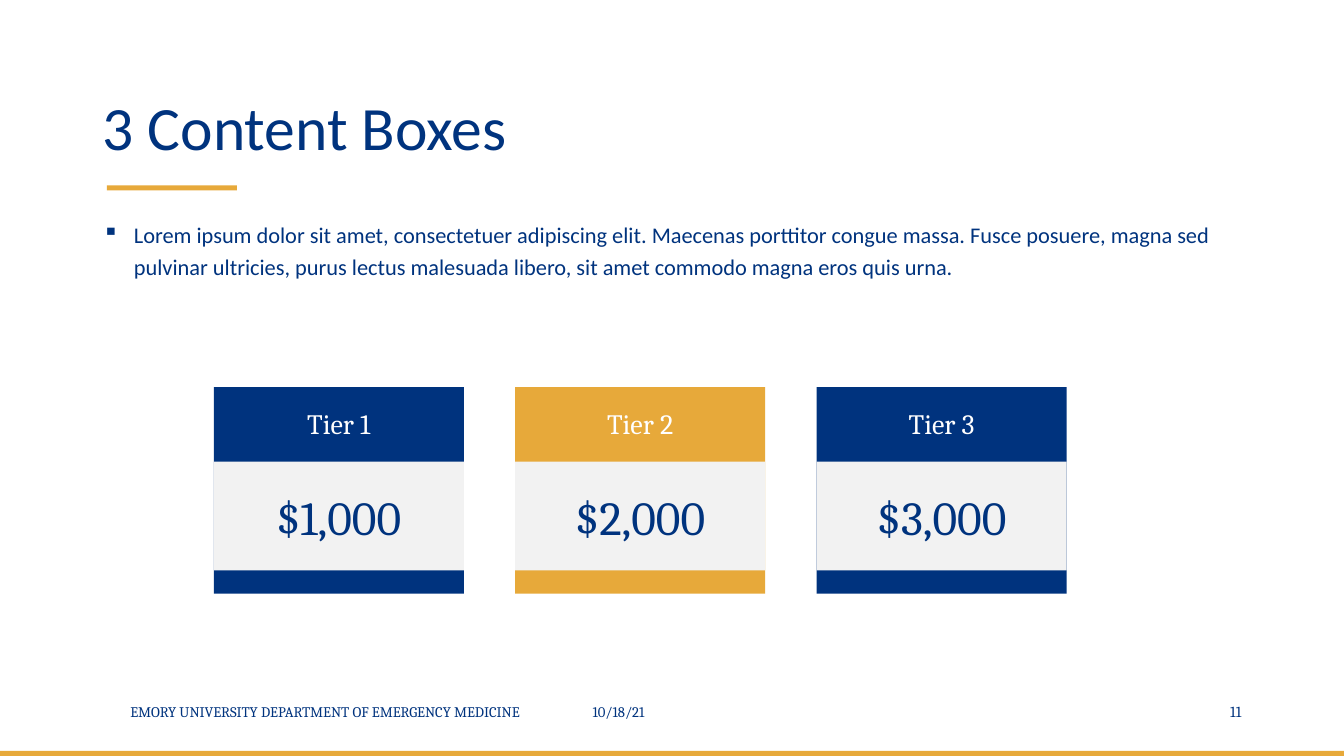
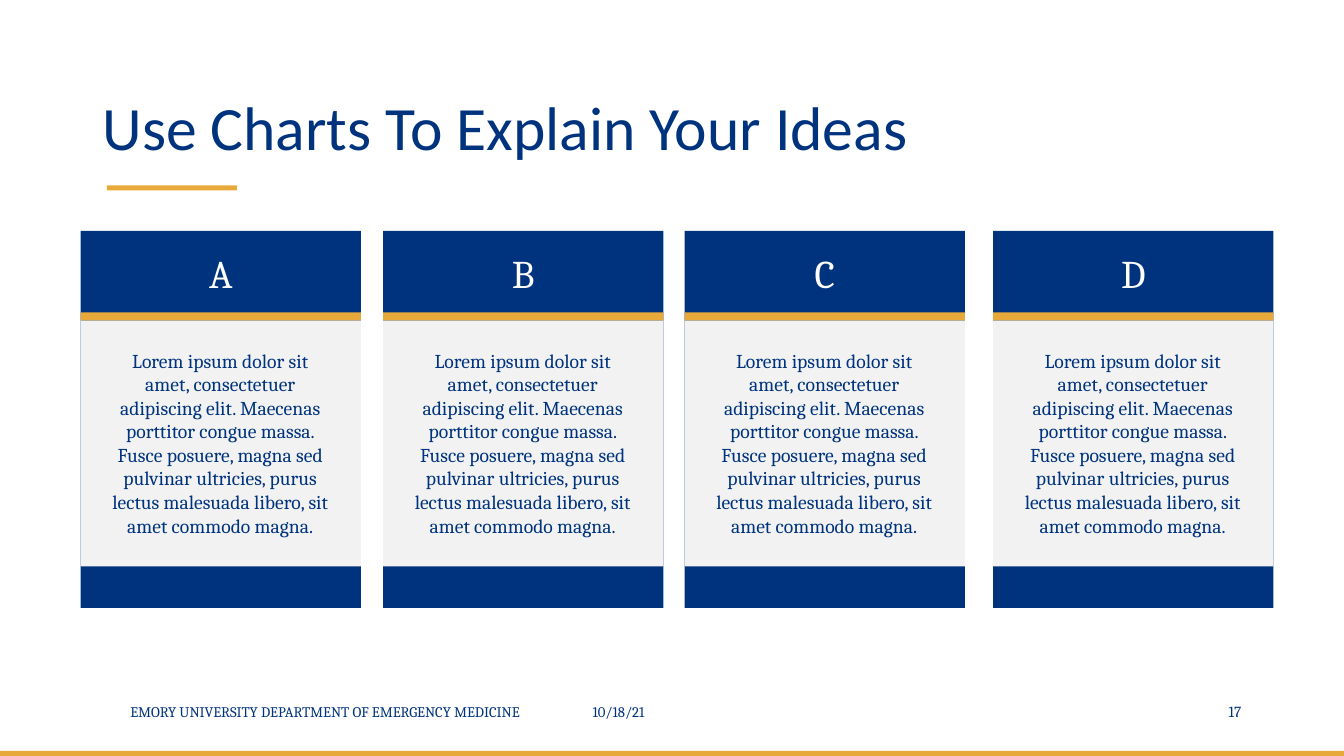
from lxml import etree
from pptx import Presentation
from pptx import util as u
from pptx.dml import color
from pptx.enum import shapes, text
from pptx.oxml import ns

NAVY, GOLD, PALE, WHITE = "00337E", "E7A93A", "F2F2F2", "FFFFFF"
HEAD_FONT, BODY_FONT = "Calibri", "Cambria"
LEFT, CENTER, RIGHT = text.PP_ALIGN.LEFT, text.PP_ALIGN.CENTER, text.PP_ALIGN.RIGHT
TOP, MIDDLE, BOTTOM = text.MSO_ANCHOR.TOP, text.MSO_ANCHOR.MIDDLE, text.MSO_ANCHOR.BOTTOM
LOREM = ("Lorem ipsum dolor sit amet, consectetuer adipiscing elit. "
         "Maecenas porttitor congue massa. Fusce posuere, magna sed pulvinar "
         "ultricies, purus lectus malesuada libero, sit amet commodo magna")


def rgb(value):
    """Turn a hex string into a colour."""
    return color.RGBColor.from_string(value)


def add_rect(s, x, y, w, h, fill):
    """Draw a plain filled rectangle."""
    sp = s.shapes.add_shape(shapes.MSO_SHAPE.RECTANGLE, *map(u.Inches, (x, y, w, h)))
    sp.shadow.inherit = False
    sp.fill.solid()
    sp.fill.fore_color.rgb = rgb(fill)
    sp.line.fill.background()


def add_bullet(p, char, indent):
    """Give a paragraph a hanging bullet."""
    pPr = p._p.get_or_add_pPr()
    pPr.set("marL", str(u.Inches(indent)))
    pPr.set("indent", str(-u.Inches(indent)))
    etree.SubElement(pPr, ns.qn("a:buChar")).set("char", char)


def add_text(s, x, y, w, h, words, size, font=BODY_FONT, ink=NAVY, align=LEFT,
             anchor=TOP, spacing=None, bullet=None, inset=0.1):
    """Place one formatted paragraph in a box."""
    tf = s.shapes.add_textbox(*map(u.Inches, (x, y, w, h))).text_frame
    tf.word_wrap = True
    tf.vertical_anchor = anchor
    tf.margin_left = u.Inches(inset)
    p = tf.paragraphs[0]
    p.alignment = align
    if bullet:
        add_bullet(p, bullet, 0.31)
    if spacing:
        p.line_spacing = spacing
    r = p.add_run()
    r.text = words
    r.font.size = u.Pt(size)
    r.font.name = font
    r.font.color.rgb = rgb(ink)


def add_base(prs, title, number):
    """Add a slide with the shared title, bands and footer."""
    s = prs.slides.add_slide(prs.slide_layouts[6])
    add_rect(s, 1.06, 1.84, 1.29, 0.05, GOLD)
    add_rect(s, 0, 7.45, 13.33, 0.05, GOLD)
    add_text(s, 0.92, 0.38, 11.5, 1.29, title, 44, font=HEAD_FONT,
             anchor=BOTTOM, spacing=0.9)
    add_text(s, 5.78, 6.86, 3, 0.4, "10/18/21", 10.5, anchor=MIDDLE)
    add_text(s, 0.92, 6.86, 4.71, 0.4, "EMORY UNIVERSITY DEPARTMENT OF EMERGENCY MEDICINE",
             10.5, align=CENTER, anchor=MIDDLE, inset=0)
    add_text(s, 11.72, 6.86, 0.69, 0.4, number, 11, align=RIGHT, anchor=MIDDLE)
    return s


def add_tier(s, x, y, w, h, name, price, fill):
    """Draw a price card with a pale middle panel."""
    add_rect(s, x, y, w, h, fill)
    add_rect(s, x, y + 0.74, w, h - 0.97, PALE)
    add_text(s, x, y + 0.14, w, 0.44, name, 20, ink=WHITE, align=CENTER)
    add_text(s, x, y + 0.95, w, 0.67, price, 34, align=CENTER)


def add_column(s, x, y, w, h, letter, words):
    """Draw a lettered card with a gold rule over its text panel."""
    add_rect(s, x, y, w, h, NAVY)
    add_rect(s, x, y + 0.89, w, h - 1.3, PALE)
    add_rect(s, x, y + 0.81, w, 0.08, GOLD)
    add_text(s, x, y + 0.13, w, 0.57, letter, 28, ink=WHITE, align=CENTER)
    add_text(s, x + 0.18, y + 1.12, w - 0.37, 1.99, words, 14, align=CENTER)


def tiers_slide(prs):
    """Build the slide of three price tiers."""
    s = add_base(prs, "3 Content Boxes", "11")
    add_text(s, 0.92, 2.09, 11.5, 1.43, LOREM + " eros quis urna.", 16,
             font=HEAD_FONT, spacing=1.2, bullet="▪")
    for i, fill in enumerate((NAVY, GOLD, NAVY)):
        add_tier(s, 2.12 + 2.99 * i, 3.84, 2.48, 2.05,
                 f"Tier {i + 1}", f"${i + 1},000", fill)


def columns_slide(prs):
    """Build the slide of four lettered columns."""
    s = add_base(prs, "Use Charts To Explain Your Ideas", "17")
    for letter, x in zip("ABCD", (0.8, 3.8, 6.79, 9.85)):
        add_column(s, x, 2.29, 2.78, 3.74, letter, LOREM + ".")


def main():
    """Build and save the presentation."""
    prs = Presentation()
    prs.slide_width, prs.slide_height = u.Inches(13.33), u.Inches(7.5)
    tiers_slide(prs)
    columns_slide(prs)
    prs.save("out.pptx")


if __name__ == "__main__":
    main()
